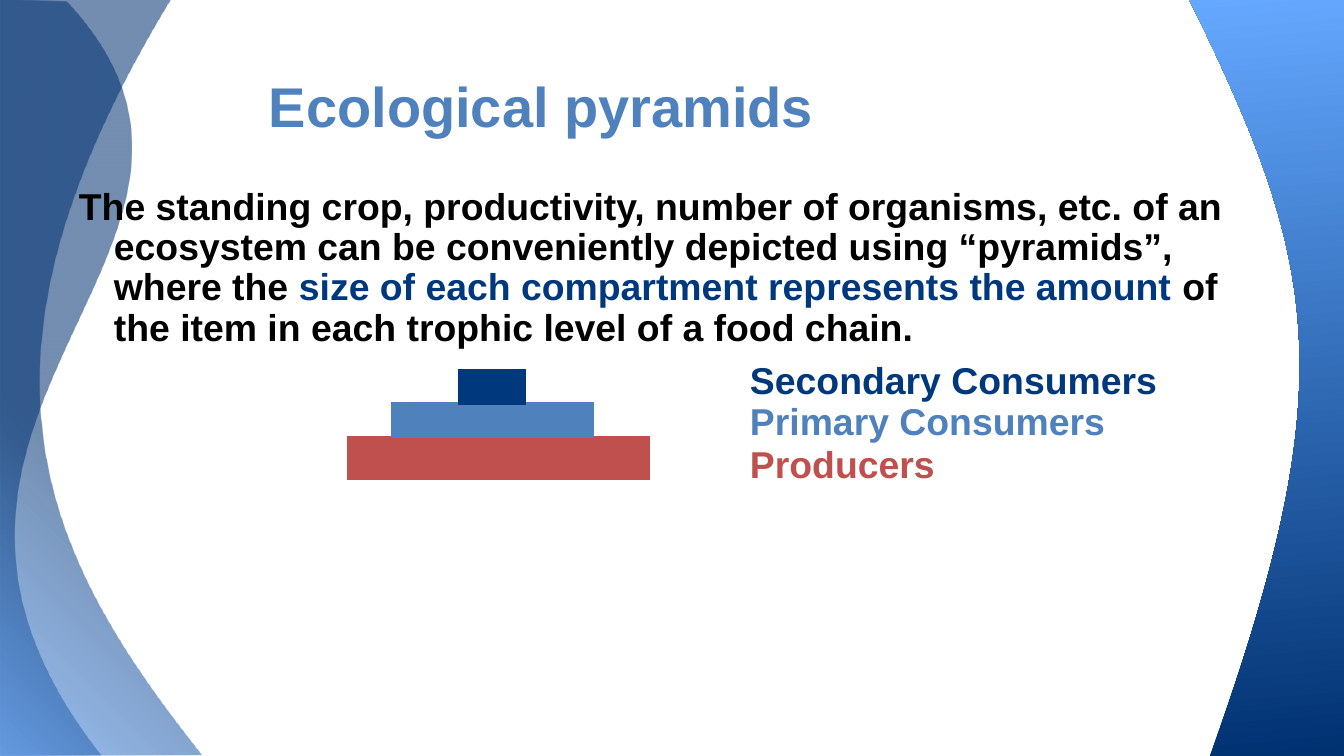
import lxml.etree
import pptx
import pptx.dml.color
import pptx.enum.shapes
import pptx.enum.text
import pptx.oxml.ns
import pptx.util

EMU_PER_PX = 914400 / 134.4
SLIDE_SIZE = (1344, 756)
FONT = "Arial"
NAVY, BLUE, RED, BLACK = "00387E", "4F81BD", "C0504D", "000000"

# Each outline is a start point, then lines (one point) or cubic curves (three points).
LEFT_STOPS = [(0, "549FFF", 54), (41, "003171", 54), (100, "003171", 54)]
RIGHT_STOPS = [(0, "003171", 100), (100, "65A8FF", 100)]
FROM_BOTTOM_LEFT = (
    '<a:path {ns} path="circle">'
    '<a:fillToRect l="0" t="100000" r="100000" b="0"/></a:path>'
)
UPWARD = '<a:lin {ns} ang="15900000" scaled="0"/>'
WAVES = [
    ((202, 755), [[(-1, 756)], [(0, 504), (0, 250), (0, -2)], [(171, 0)],
                  [(-51, 366), (44, 555), (202, 755)]], LEFT_STOPS, FROM_BOTTOM_LEFT),
    ((101, 755), [[(1, 756)], [(1, 504), (1, 252), (1, 0)], [(67, 2)],
                  [(292, 245), (-164, 414), (101, 755)]], LEFT_STOPS, FROM_BOTTOM_LEFT),
    ((1351, 756), [[(1210, 756)], [(1345, 382), (1319, 263), (1189, -1)],
                   [(1351, -1)]], RIGHT_STOPS, UPWARD),
]

TITLE = [("Ecological pyramids", BLUE)]
DEFINITION = [
    ("The standing crop, productivity, number of organisms, etc. of an ecosystem "
     "can be conveniently depicted using “pyramids”, where the ", BLACK),
    ("size of each compartment represents the amount", NAVY),
    (" of the item in each trophic level of a food chain.", BLACK),
]

# Name, colour, tier left, top, width and height, label top and width
TROPHIC_LEVELS = [
    ("Producers", RED, 351, 440, 295, 36, 436, 218),
    ("Primary Consumers", BLUE, 395, 406, 195, 28, 393, 425),
    ("Secondary Consumers", NAVY, 462, 373, 60, 28, 352, 448),
]
LABEL_LEFT, LABEL_HEIGHT = 739, 50


def px(length):
    return pptx.util.Emu(round(length * EMU_PER_PX))


def rgb(colour):
    return pptx.dml.color.RGBColor.from_string(colour)


def qn(tag):
    return pptx.oxml.ns.qn(tag)


def set_values(target, values):
    for name, value in values.items():
        setattr(target, name, value)


def fill_gradient(shape, stops, direction):
    """Set a gradient with its own stops, opacities and direction."""
    shape.fill.gradient()
    gradient = shape._element.spPr.find(qn("a:gradFill"))
    for child in list(gradient):
        gradient.remove(child)
    stop_list = lxml.etree.SubElement(gradient, qn("a:gsLst"))
    for position, colour, opacity in stops:
        stop = lxml.etree.SubElement(stop_list, qn("a:gs"), pos=str(position * 1000))
        tint = lxml.etree.SubElement(stop, qn("a:srgbClr"), val=colour)
        lxml.etree.SubElement(tint, qn("a:alpha"), val=str(opacity * 1000))
    gradient.append(pptx.oxml.parse_xml(
        direction.format(ns=pptx.oxml.ns.nsdecls("a"))))


def bend_curves(shape, segments):
    """Join the three lines of each curved segment into one cubic curve."""
    lines = iter(list(shape._element.spPr.iter(qn("a:lnTo"))))
    for segment in segments:
        parts = [next(lines) for _ in segment]
        if len(parts) == 3:
            bend = lxml.etree.Element(qn("a:cubicBezTo"))
            parts[0].addprevious(bend)
            for part in parts:
                bend.append(part[0])
                part.getparent().remove(part)


def add_wave(shapes, start, segments, stops, direction):
    builder = shapes.build_freeform(*map(px, start))
    points = [(px(x), px(y)) for segment in segments for x, y in segment]
    builder.add_line_segments(points, close=True)
    wave = builder.convert_to_shape()
    bend_curves(wave, segments)
    wave.shadow.inherit = False
    wave.line.fill.background()
    fill_gradient(wave, stops, direction)


def add_text(shapes, box, runs, size, line_spacing=1.0, hanging=0,
             anchor=pptx.enum.text.MSO_ANCHOR.TOP):
    frame = shapes.add_textbox(*map(px, box)).text_frame
    set_values(frame, {
        "word_wrap": True, "vertical_anchor": anchor,
        "margin_left": px(11), "margin_right": px(11),
        "margin_top": px(5), "margin_bottom": px(5),
    })
    paragraph = frame.paragraphs[0]
    paragraph.line_spacing = line_spacing
    if hanging:
        properties = paragraph._p.get_or_add_pPr()
        properties.set("marL", str(px(hanging)))
        properties.set("indent", str(-px(hanging)))
    for words, colour in runs:
        run = paragraph.add_run()
        run.text = words
        set_values(run.font, {"name": FONT, "size": pptx.util.Pt(size), "bold": True})
        run.font.color.rgb = rgb(colour)


def add_tier(shapes, box, colour):
    tier = shapes.add_shape(pptx.enum.shapes.MSO_SHAPE.RECTANGLE, *map(px, box))
    tier.shadow.inherit = False
    tier.fill.solid()
    tier.fill.fore_color.rgb = rgb(colour)
    tier.line.color.rgb = rgb(colour)
    tier.line.width = pptx.util.Pt(4)
    outline = tier._element.spPr.find(qn("a:ln"))
    lxml.etree.SubElement(outline, qn("a:miter"), lim="800000")


def main():
    deck = pptx.Presentation()
    deck.slide_width, deck.slide_height = map(px, SLIDE_SIZE)
    shapes = deck.slides.add_slide(deck.slide_layouts[6]).shapes

    for wave in WAVES:
        add_wave(shapes, *wave)
    add_text(shapes, (258, 36, 1210, 146), TITLE, 30, 0.9,
             anchor=pptx.enum.text.MSO_ANCHOR.MIDDLE)
    for name, colour, *tier_box, label_top, label_width in TROPHIC_LEVELS:
        add_tier(shapes, tier_box, colour)
        add_text(shapes, (LABEL_LEFT, label_top, label_width, LABEL_HEIGHT),
                 [(name, colour)], 20)
    add_text(shapes, (68, 183, 1210, 533), DEFINITION, 20, 0.9, hanging=35)

    deck.save("out.pptx")


if __name__ == "__main__":
    main()
